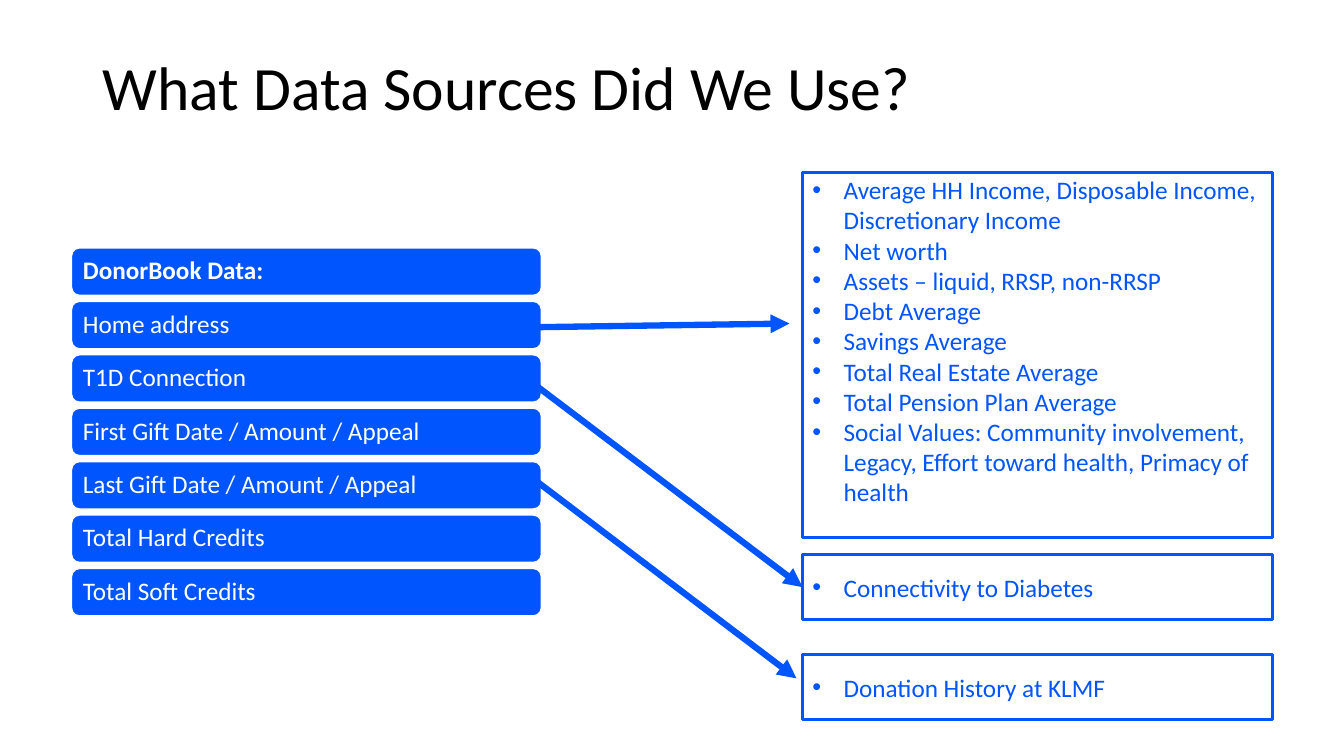
from lxml import etree
from pptx import Presentation
from pptx.dml.color import RGBColor
from pptx.enum.shapes import MSO_CONNECTOR, MSO_SHAPE
from pptx.enum.text import MSO_ANCHOR, PP_ALIGN
from pptx.oxml.ns import qn
from pptx.util import Pt

PX = 9144
BLUE, WHITE, BLACK = "0055FF", "FFFFFF", "000000"


def color(value):
    return RGBColor.from_string(value)


def write(frame, lines, size, ink, bullet=False, spacing=1.0, **frame_format):
    frame_format = {"word_wrap": True, "vertical_anchor": MSO_ANCHOR.MIDDLE, **frame_format}
    for key, value in frame_format.items():
        setattr(frame, key, value)
    for number, line in enumerate(lines):
        paragraph = frame.paragraphs[0] if number == 0 else frame.add_paragraph()
        paragraph.text = line
        paragraph.alignment = PP_ALIGN.LEFT
        paragraph.line_spacing = spacing
        if bullet:
            properties = paragraph._p.get_or_add_pPr()
            properties.set("marL", str(31 * PX))
            properties.set("indent", str(-31 * PX))
            etree.SubElement(properties, qn("a:buFont")).set("typeface", "Arial")
            etree.SubElement(properties, qn("a:buChar")).set("char", "•")
        for key, value in {"name": "Calibri", "size": Pt(size)}.items():
            setattr(paragraph.font, key, value)
        paragraph.font.color.rgb = color(ink)


deck = Presentation()
deck.slide_width, deck.slide_height = 1333 * PX, 750 * PX
slide = deck.slides.add_slide(deck.slide_layouts[5])

title = slide.shapes.title
title.left, title.top, title.width, title.height = 92 * PX, 43 * PX, 1199 * PX, 93 * PX
write(title.text_frame, ["What Data Sources Did We Use?"], 44, BLACK, spacing=0.9)

fields = [
    "DonorBook Data:",
    "Home address",
    "T1D Connection",
    "First Gift Date / Amount / Appeal",
    "Last Gift Date / Amount / Appeal",
    "Total Hard Credits",
    "Total Soft Credits",
]
for row, field in enumerate(fields):
    card = slide.shapes.add_shape(
        MSO_SHAPE.ROUNDED_RECTANGLE, 71 * PX, (246 + 53 * row) * PX, 466 * PX, 47 * PX)
    card.shadow.inherit = False
    card.fill.solid()
    card.fill.fore_color.rgb = color(BLUE)
    card.line.color.rgb = color(WHITE)
    card.line.width = Pt(1)
    write(card.text_frame, [field], 18, WHITE, spacing=0.9, margin_left=9 * PX)
    card.text_frame.paragraphs[0].font.bold = row == 0

wealth = [
    "Average HH Income, Disposable Income, Discretionary Income",
    "Net worth",
    "Assets – liquid, RRSP, non-RRSP",
    "Debt Average",
    "Savings Average",
    "Total Real Estate Average",
    "Total Pension Plan Average",
    "Social Values: Community involvement, Legacy, Effort toward health, Primacy of health",
]
top_aligned = {"vertical_anchor": MSO_ANCHOR.TOP, "margin_top": 2 * PX}
insights = [
    (171, 362, wealth, top_aligned),
    (550, 65, ["Connectivity to Diabetes"], {}),
    (649, 65, ["Donation History at KLMF"], {}),
]
panels = []
for top, height, lines, placement in insights:
    panel = slide.shapes.add_shape(MSO_SHAPE.RECTANGLE, 796 * PX, top * PX, 466 * PX, height * PX)
    panel.shadow.inherit = False
    panel.fill.background()
    panel.line.color.rgb = color(BLUE)
    panel.line.width = Pt(2.25)
    write(panel.text_frame, lines, 18, BLUE, bullet=True, **placement)
    panels.append(panel)

arrows = []
for ends in [(504, 325, 783, 321), (527, 379, 796, 583), (521, 469, 790, 673)]:
    arrow = slide.shapes.add_connector(MSO_CONNECTOR.STRAIGHT, *[end * PX for end in ends])
    arrow.line.color.rgb = color(BLUE)
    arrow.line.width = Pt(4.5)
    etree.SubElement(arrow.line._get_or_add_ln(), qn("a:tailEnd")).set("type", "triangle")
    etree.SubElement(arrow._element.spPr, qn("a:effectLst"))
    arrows.append(arrow)
arrows[1].end_connect(panels[1], 1)

deck.save("out.pptx")
